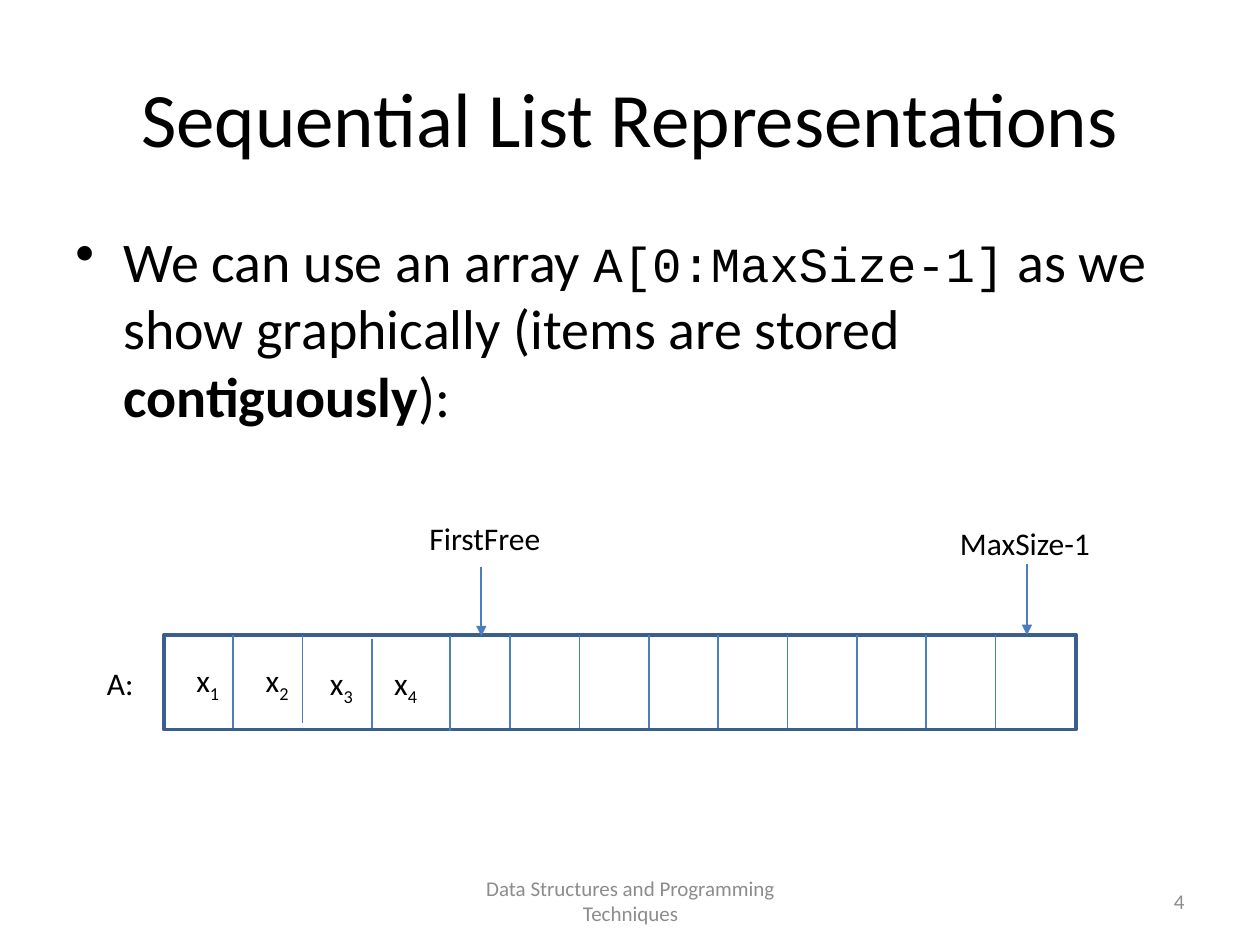
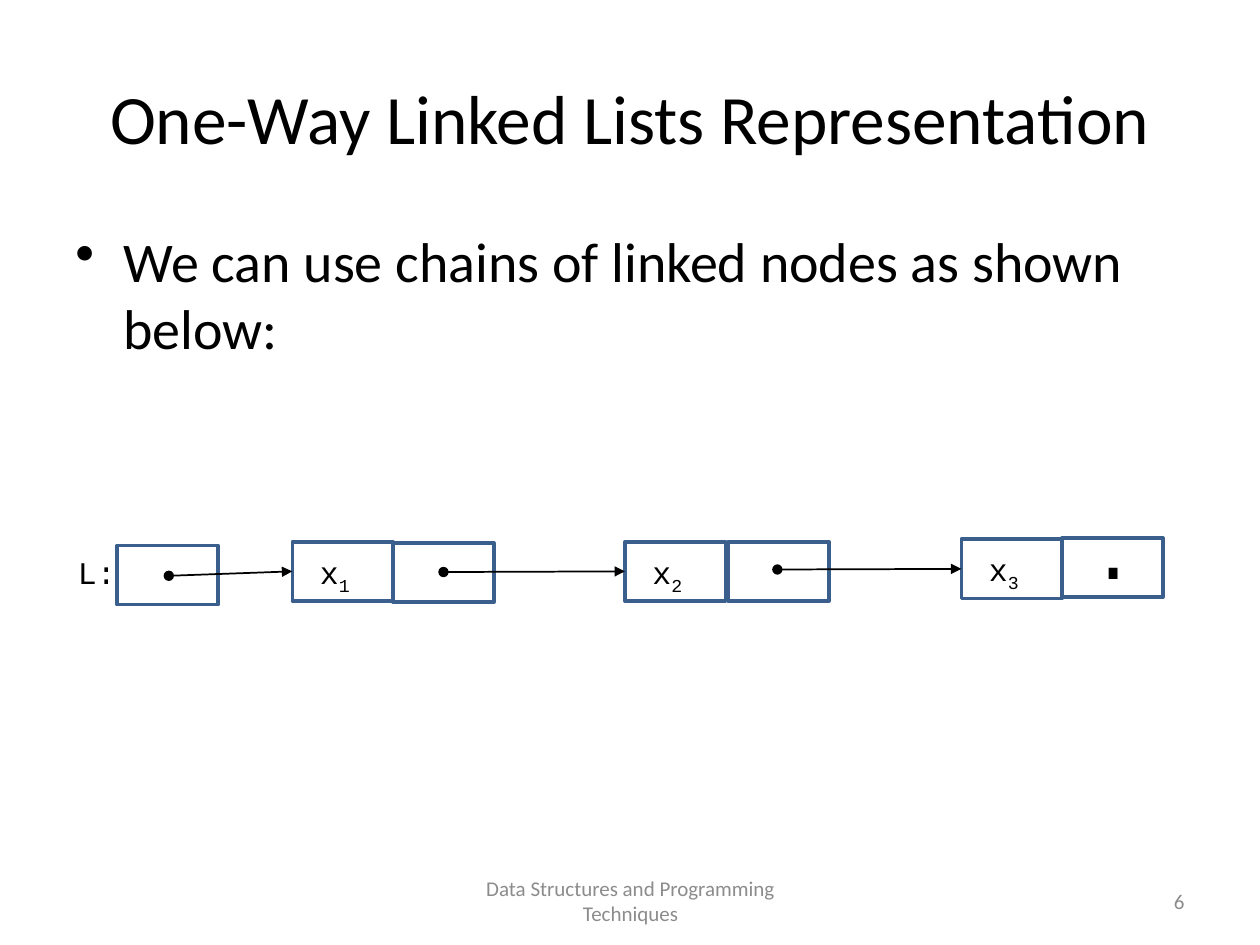
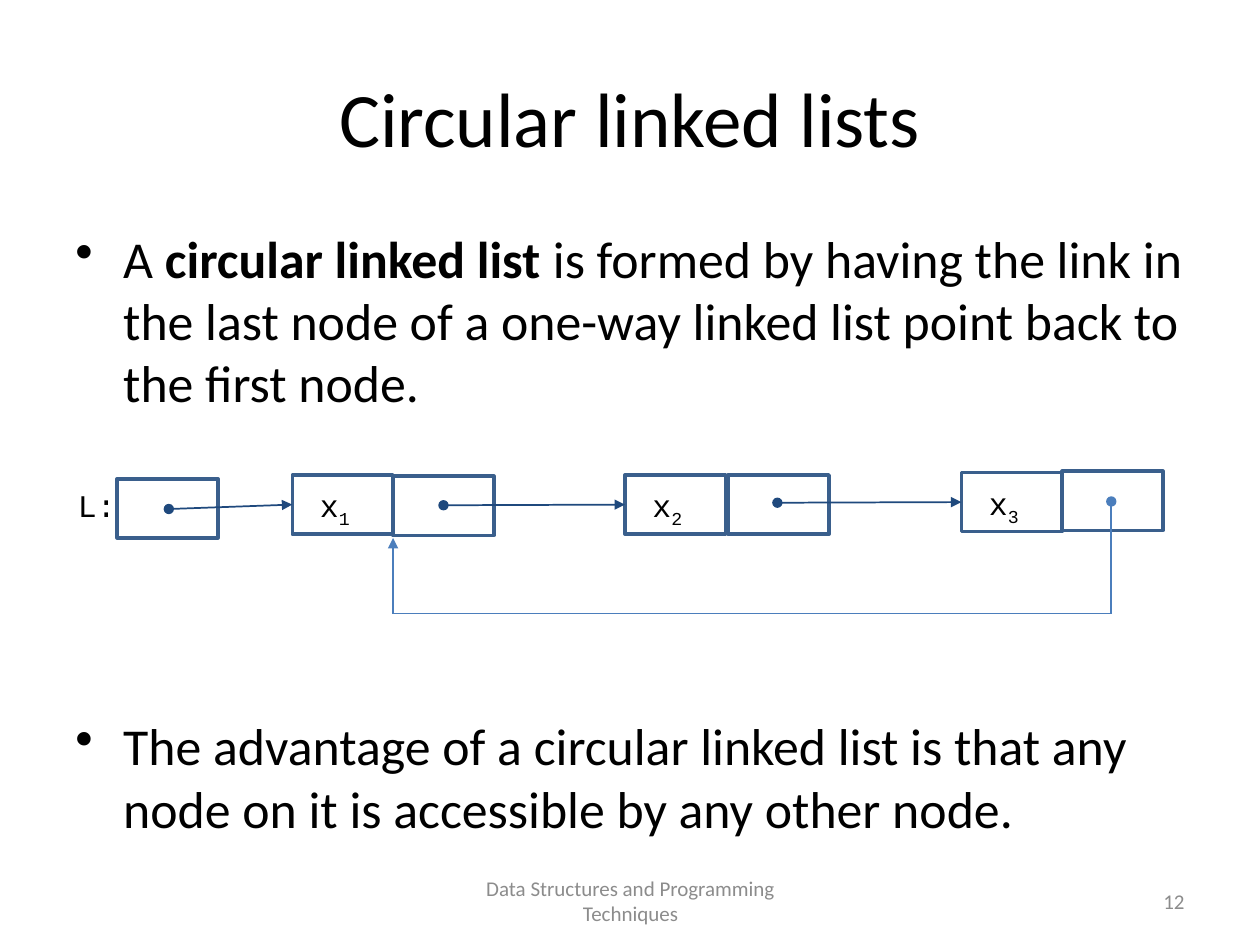
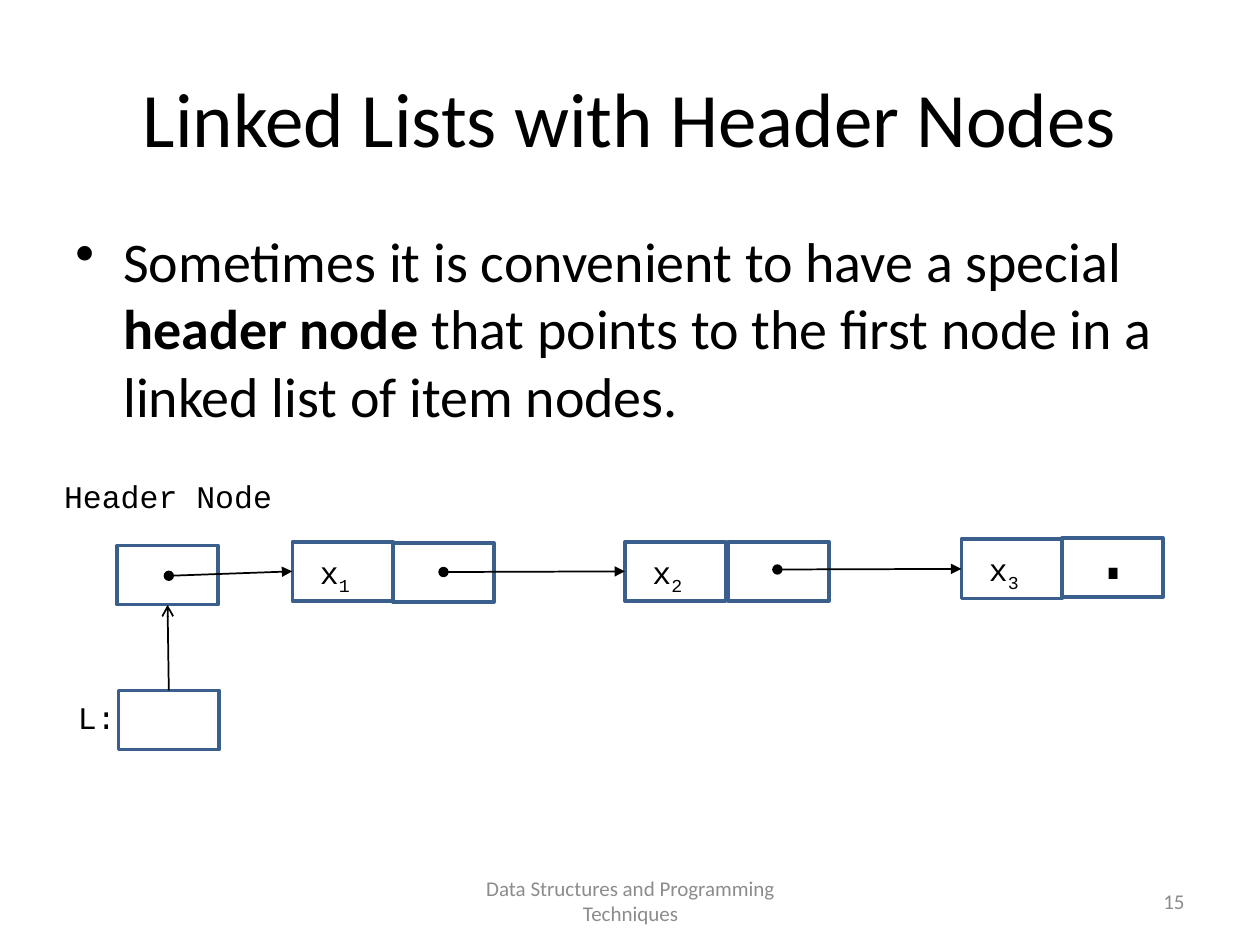
from lxml import etree
from pptx import Presentation
from pptx.dml.color import RGBColor
from pptx.enum.shapes import MSO_CONNECTOR, MSO_SHAPE
from pptx.enum.text import MSO_ANCHOR, PP_ALIGN
from pptx.oxml.ns import qn
from pptx.util import Inches, Pt

COLORS = {"text": "000000", "footer": "8C8C8C", "border": "3A5F8C",
          "blue": "4B7EBC", "navy": "1F497D", "white": "FFFFFF"}
SANS, MONO = "Calibri", "Courier New"
FOOTER = "Data Structures and Programming Techniques"


def write(page, place, paragraphs, size=18, face=SANS, color="text",
          align=PP_ALIGN.LEFT, anchor=MSO_ANCHOR.TOP, bullet=False):
    """Add a text box; each paragraph is (space before, [(text, style), ...])."""
    box = page.shapes.add_textbox(*[Inches(length) for length in place])
    frame = box.text_frame
    frame.word_wrap = True
    frame.vertical_anchor = anchor
    for index, (gap, spans) in enumerate(paragraphs):
        para = frame.paragraphs[0] if index == 0 else frame.add_paragraph()
        para.alignment = align
        para.space_before = Pt(gap)
        if bullet:
            properties = para._p.get_or_add_pPr()
            properties.set("marL", str(Inches(0.38)))
            properties.set("indent", str(Inches(-0.38)))
            etree.SubElement(properties, qn("a:buChar")).set("char", "•")
        para.font.size = Pt(size)
        para.font.name = face
        para.font.color.rgb = RGBColor.from_string(COLORS[color])
        for text, style in spans:
            span = para.add_run()
            span.text = text
            if style == "bold":
                span.font.bold = True
            elif style == "code":
                span.font.name, span.font.size = MONO, Pt(28)
            elif style == "sub":
                span._r.get_or_add_rPr().set("baseline", "-25000")


def draw_line(page, start, end, color, head=None, tail=None):
    """Add a straight line with optional marks at its start and end."""
    line = page.shapes.add_connector(
        MSO_CONNECTOR.STRAIGHT, *[Inches(length) for length in start + end])
    line.line.color.rgb = RGBColor.from_string(COLORS[color])
    line.line.width = Pt(1)
    properties = line.element.spPr
    for tag, mark in (("a:headEnd", head), ("a:tailEnd", tail)):
        if mark:
            etree.SubElement(properties.find(qn("a:ln")), qn(tag)).set("type", mark)
    etree.SubElement(properties, qn("a:effectLst"))
    return line


# Slide contents; "shift" moves the chain of nodes vertically
CELL = (0.8, 0.47)
CHAIN = [(0.93, 4.33), (2.32, 4.3), (3.12, 4.31), (4.96, 4.3),
         (5.78, 4.3), (7.63, 4.28), (8.43, 4.27)]
LINKS = [((1.34, 4.57), 1), ((3.52, 4.54), 3), ((6.17, 4.52), 5)]

SLIDES = [
    {"title": "Sequential List Representations", "number": 4,
     "body": [(0, [("We can use an array ", ""), ("A[0:MaxSize-1]", "code"),
                   (" as we show graphically (items are stored ", ""),
                   ("contiguously", "bold"), ("):", "")])],
     "boxes": [(1.3, 5.04, 7.24, 0.75)]},
    {"title": "One-Way Linked Lists Representation", "title_size": 39.6, "number": 6,
     "body": [(0, [("We can use chains of linked nodes as shown below:", "")])],
     "shift": 0, "link_color": "text", "list_top": 4.34},
    {"title": "Circular linked lists", "number": 12, "body_size": 29.6,
     "body": [(0, [("A ", ""), ("circular linked list ", "bold"),
                   ("is formed by having the link in the last node of a one-way "
                    "linked list point back to the first node.", "")]),
              (172, [("The advantage of a circular linked list is that any node "
                      "on it is accessible by any other node.", "")])],
     "shift": -0.53, "link_color": "navy", "list_top": 3.81},
    {"title": "Linked Lists with Header Nodes", "number": 15,
     "body": [(0, [("Sometimes it is convenient to have a special ", ""),
                   ("header node ", "bold"),
                   ("that points to the first node in a linked list of item nodes.", "")])],
     "shift": 0, "link_color": "text", "list_top": 5.49,
     "boxes": [(0.94, 5.48, *CELL)]},
]

deck = Presentation()
deck.slide_width, deck.slide_height = Inches(10), Inches(7.5)
pages, boxes_by_page = [], []

for content in SLIDES:
    page = deck.slides.add_slide(deck.slide_layouts[6])
    pages.append(page)

    # Title, body and footer
    write(page, (0.5, 0.3, 9, 1.25), [(0, [(content["title"], "")])],
          content.get("title_size", 44), align=PP_ALIGN.CENTER, anchor=MSO_ANCHOR.MIDDLE)
    write(page, (0.5, 1.75, 9, 4.95), content["body"],
          content.get("body_size", 32), bullet=True)
    for place, text, align in (
            ((3.42, 6.95, 3.17, 0.4), FOOTER, PP_ALIGN.CENTER),
            ((7.17, 6.95, 2.33, 0.4), str(content["number"]), PP_ALIGN.RIGHT)):
        write(page, place, [(0, [(text, "")])], 12, color="footer",
              align=align, anchor=MSO_ANCHOR.MIDDLE)

    # Boxes: chain cells first, then those of this slide alone
    linked = "shift" in content
    places = [(left, top + content["shift"], *CELL) for left, top in CHAIN] if linked else []
    boxes = []
    for place in places + content.get("boxes", []):
        box = page.shapes.add_shape(
            MSO_SHAPE.RECTANGLE, *[Inches(length) for length in place])
        box.shadow.inherit = False
        box.fill.background()
        box.line.color.rgb = RGBColor.from_string(COLORS["border"])
        box.line.width = Pt(2)
        boxes.append(box)
    boxes_by_page.append(boxes)

    # Links and labels of the chain
    if linked:
        for (left, top), target in LINKS:
            top += content["shift"]
            link = draw_line(page, (left, top), places[target][:2],
                             content["link_color"], "oval", "triangle")
            link.end_connect(boxes[target], 1)
            number = (target + 1) // 2
            write(page, (places[target][0] + 0.12, places[target][1] + 0.04, 0.55, 0.4),
                  [(0, [("x", ""), (str(number), "sub")])], face=MONO)
        write(page, (0.52, content["list_top"], 0.71, 0.4), [(0, [("L:", "")])], face=MONO)

array_page, one_way_page, circular_page, header_page = pages

# Array: dividers at equal steps, with a few set by hand
array = boxes_by_page[0][0]
array.fill.solid()
array.fill.fore_color.rgb = RGBColor.from_string(COLORS["white"])
uneven = {1: (2.4, 5.04, 5.74), 2: (2.95, 5.07, 5.78), 3: (3.57, 5.05, 5.8)}
for index in range(12):
    left, top, bottom = uneven.get(index, (1.85 + 0.55 * index, 5.04, 5.78))
    draw_line(array_page, (left, top), (left, bottom), "blue")

# Array: items, labels and pointers
for index, (left, top) in enumerate([(1.46, 5.2), (2.01, 5.2), (2.52, 5.22), (3.03, 5.22)], 1):
    write(array_page, (left, top, 0.55, 0.4), [(0, [("x", ""), (str(index), "sub")])])
for text, left, top, width in (("A:", 0.75, 5.22, 0.55), ("MaxSize-1", 7.52, 4.11, 1.5),
                               ("FirstFree", 3.31, 4.07, 1.5)):
    write(array_page, (left, top, width, 0.4), [(0, [(text, "")])])
for left, top, bottom in ((3.82, 4.5, 5.05), (8.15, 4.48, 5.04)):
    draw_line(array_page, (left, top), (left, bottom), "blue", tail="triangle")

# End mark in the last node
for page in (one_way_page, header_page):
    write(page, (8.56, 3.94, 1, 0.84), [(0, [(".", "")])], 44, MONO)

# Circular list: way back to the first node
corners = [(8.82, 3.98), (8.82, 4.87), (3.12, 4.87), (3.12, 4.27)]
marks = [("oval", None), (None, None), (None, "triangle")]
for start, end, (head, tail) in zip(corners, corners[1:], marks):
    draw_line(circular_page, start, end, "blue", head, tail)

# Header node: label and pointer from L
write(header_page, (0.41, 3.74, 1.92, 0.4), [(0, [("Header Node", "")])], face=MONO)
header_boxes = boxes_by_page[3]
pointer = draw_line(header_page, (1.34, 5.48), (1.33, 4.8), "text", tail="arrow")
pointer.begin_connect(header_boxes[-1], 0)
pointer.end_connect(header_boxes[0], 2)

deck.save("out.pptx")
